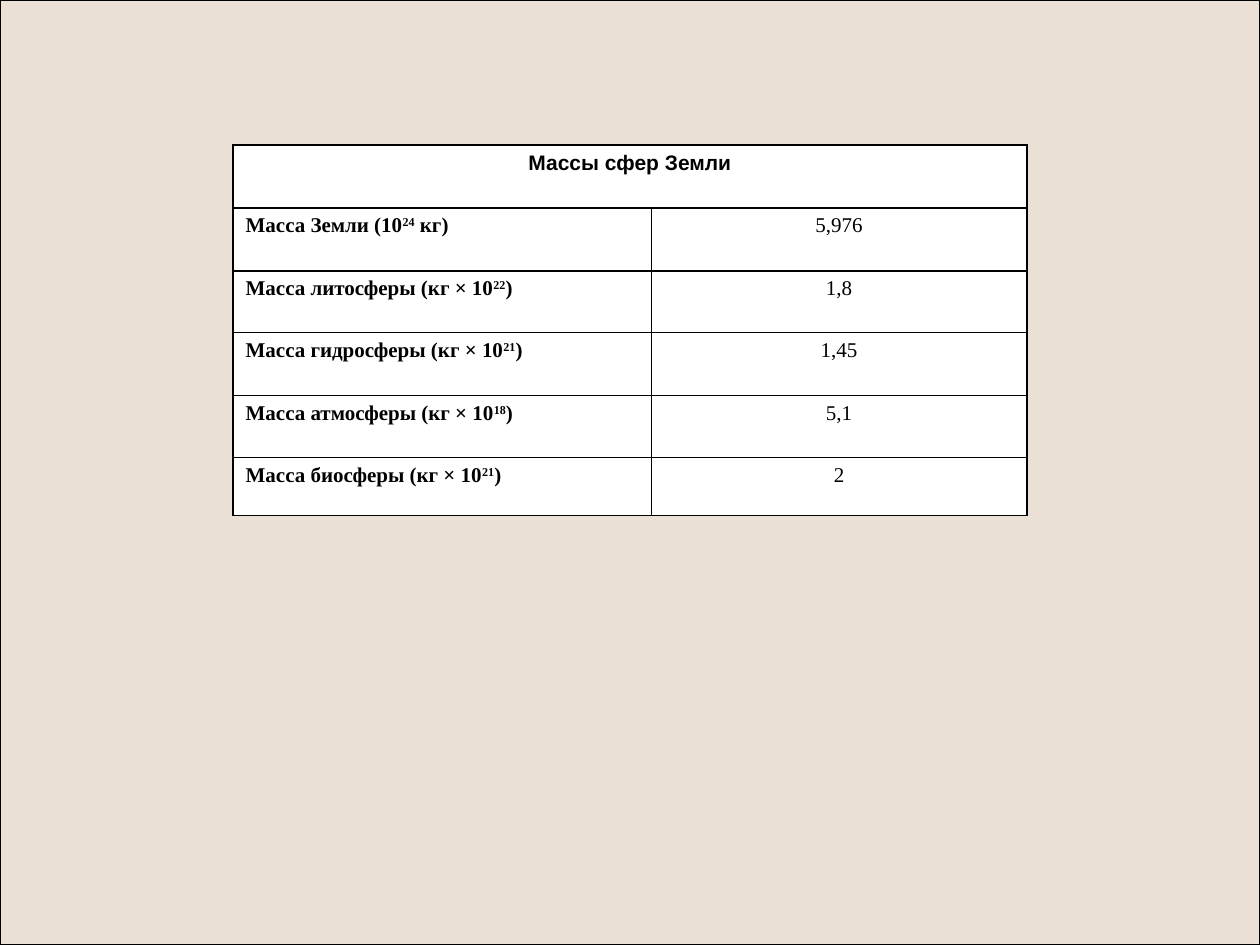
from lxml import etree
from pptx import Presentation
from pptx.dml.color import RGBColor
from pptx.enum.shapes import MSO_SHAPE
from pptx.enum.text import PP_ALIGN
from pptx.oxml.ns import qn
from pptx.util import Inches, Pt

RECT = MSO_SHAPE.RECTANGLE
LEFT, CENTER = PP_ALIGN.LEFT, PP_ALIGN.CENTER
BLANK_LAYOUT = 6
COLORS = {"tint": "996633", "ink": "000000", "paper": "FFFFFF"}
TITLE = "Массы сфер Земли"
MASSES = [
    (("Масса Земли (10", "24", " кг)"), "5,976"),
    (("Масса литосферы (кг × 10", "22", ")"), "1,8"),
    (("Масса гидросферы (кг × 10", "21", ")"), "1,45"),
    (("Масса атмосферы (кг × 10", "18", ")"), "5,1"),
    (("Масса биосферы (кг × 10", "21", ")"), "2"),
]
COL_WIDTHS = (3.32, 2.98)
ROW_HEIGHTS = (0.5, 0.5, 0.49, 0.5, 0.49, 0.46)


class SlideBuilder:
    heading_font = "Arial"
    body_font = "Times New Roman"
    size = Pt(12)
    border = Pt(1)

    def __init__(self, s):
        self.s = s

    def color(self, name):
        return RGBColor.from_string(COLORS[name])

    def backdrop(self, width, height, opacity):
        sp = self.s.shapes.add_shape(RECT, 0, 0, width, height)
        sp.shadow.inherit = False
        sp.fill.solid()
        sp.fill.fore_color.rgb = self.color("tint")
        tint = sp._element.spPr.find(qn("a:solidFill"))[0]
        etree.SubElement(tint, qn("a:alpha"), val=str(opacity * 1000))
        sp.line.color.rgb = self.color("ink")
        sp.line.width = Pt(0.75)

    def table(self, left, top, widths, heights):
        frame = self.s.shapes.add_table(
            len(heights), len(widths), Inches(left), Inches(top),
            Inches(sum(widths)), Inches(sum(heights)))
        table = frame.table
        table.first_row = table.horz_banding = False
        for col, width in zip(table.columns, widths):
            col.width = Inches(width)
        for row, height in zip(table.rows, heights):
            row.height = Inches(height)
            for cell in row.cells:
                self.style_cell(cell)
        return table

    def style_cell(self, cell):
        tcPr = cell._tc.get_or_add_tcPr()
        for side in ("lnL", "lnR", "lnT", "lnB"):
            ln = etree.SubElement(tcPr, qn(f"a:{side}"), w=str(self.border))
            fill = etree.SubElement(ln, qn("a:solidFill"))
            etree.SubElement(fill, qn("a:srgbClr"), val=COLORS["ink"])
        cell.fill.solid()
        cell.fill.fore_color.rgb = self.color("paper")

    def cell_text(self, cell, texts, font, bold, align):
        p = cell.text_frame.paragraphs[0]
        p.alignment = align
        for i, text in enumerate(texts):
            r = p.add_run()
            r.text = text
            r.font.name = font
            r.font.size = self.size
            r.font.bold = bold
            r.font.color.rgb = self.color("ink")
            if i == 1:
                r._r.get_or_add_rPr().set("baseline", "30000")


def main():
    prs = Presentation()
    prs.slide_width, prs.slide_height = Inches(10), Inches(7.5)
    s = prs.slides.add_slide(prs.slide_layouts[BLANK_LAYOUT])
    builder = SlideBuilder(s)
    builder.backdrop(prs.slide_width, prs.slide_height, 20)

    table = builder.table(1.85, 1.15, COL_WIDTHS, ROW_HEIGHTS)
    table.cell(0, 0).merge(table.cell(0, 1))
    builder.cell_text(table.cell(0, 0), (TITLE,), builder.heading_font, True, CENTER)
    for row, (label, value) in enumerate(MASSES, 1):
        builder.cell_text(table.cell(row, 0), label, builder.body_font, True, LEFT)
        builder.cell_text(table.cell(row, 1), (value,), builder.body_font, False, CENTER)

    prs.save("out.pptx")


if __name__ == "__main__":
    main()
